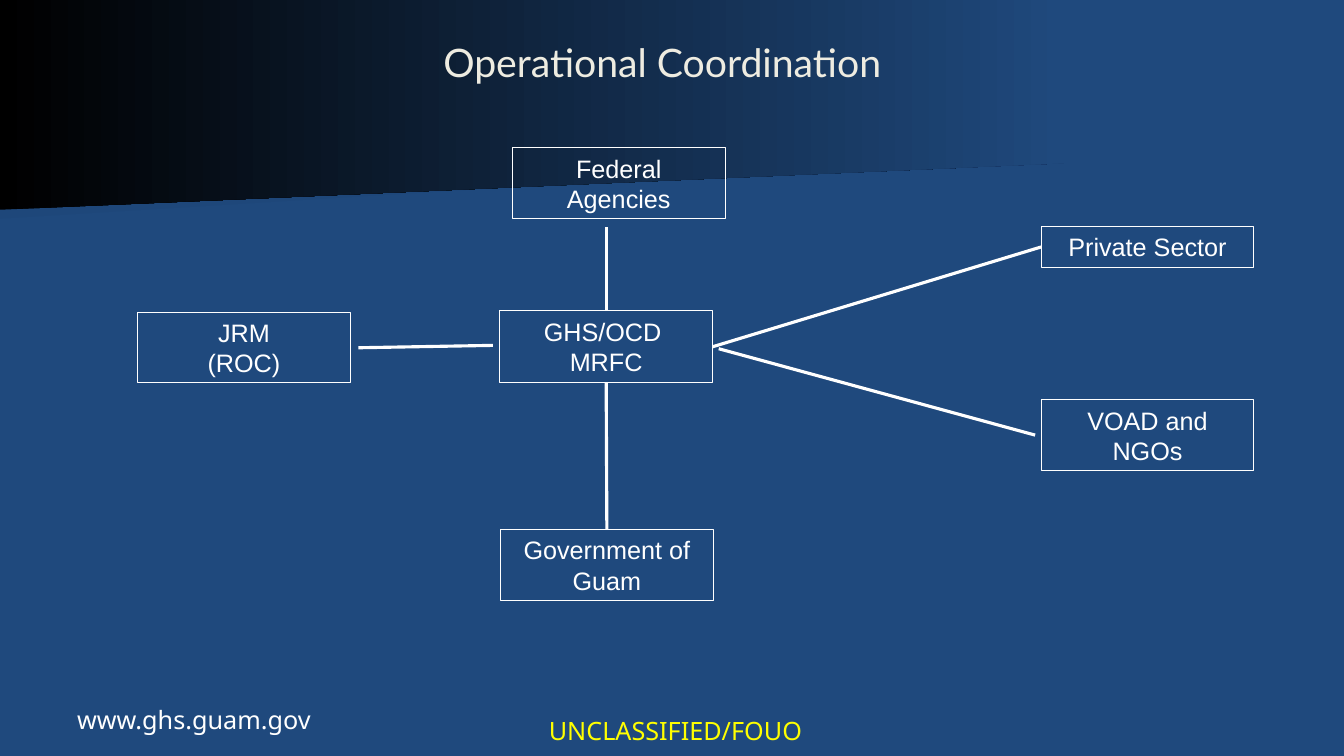
from lxml import etree
from pptx import Presentation
from pptx.dml.color import RGBColor
from pptx.enum import shapes, text
from pptx.oxml.ns import qn
from pptx.util import Pt

NAVY = RGBColor(0x1F, 0x49, 0x7D)
DEEP_BLUE = RGBColor(0x1E, 0x47, 0x7A)
BLACK = RGBColor(0, 0, 0)
WHITE = RGBColor(0xFF, 0xFF, 0xFF)
CREAM = RGBColor(0xEE, 0xEC, 0xE1)
YELLOW = RGBColor(0xFF, 0xFF, 0)
BOX_WIDTH = 152


def write(shape, content, font="Arial", size=18, color=WHITE,
          align=text.PP_ALIGN.CENTER, anchor=text.MSO_ANCHOR.MIDDLE):
    """Fill a shape with text, one paragraph per line."""
    frame = shape.text_frame
    frame.word_wrap = True
    frame.vertical_anchor = anchor
    frame.text = content
    for paragraph in frame.paragraphs:
        paragraph.alignment = align
        paragraph.font.name = font
        paragraph.font.size = Pt(size)
        paragraph.font.color.rgb = color


presentation = Presentation()
presentation.slide_width, presentation.slide_height = Pt(960), Pt(540)
slide = presentation.slides.add_slide(presentation.slide_layouts[6])
slide.background.fill.solid()
slide.background.fill.fore_color.rgb = NAVY

# Slanted gradient bands behind the title
bands = [
    (DEEP_BLUE, [(746.6, 110.2), (0, 156.2), (0, 72.7), (748, 72.7), (746.6, 92.2)]),
    (BLACK, [(760.3, 116.6), (0, 149.8), (0, 0), (760.3, 0)]),
]
for start_color, corners in bands:
    points = [(Pt(x), Pt(y)) for x, y in corners]
    builder = slide.shapes.build_freeform(*points[0])
    builder.add_line_segments(points[1:], close=True)
    band = builder.convert_to_shape()
    band.shadow.inherit = False
    band.line.fill.background()
    band.fill.gradient()
    band.fill.gradient_angle = 0
    for stop, color in zip(band.fill.gradient_stops, (start_color, NAVY)):
        stop.color.rgb = color

# Title and footers
labels = [
    (41, 21.6, 864, 44.6, "Operational Coordination",
     dict(font="Lato", size=28, color=CREAM)),
    (48, 504, 304, 24, "www.ghs.guam.gov",
     dict(font="Noto Sans", align=text.PP_ALIGN.LEFT, anchor=text.MSO_ANCHOR.BOTTOM)),
    (330.5, 512, 304, 24, "UNCLASSIFIED/FOUO",
     dict(font="Noto Sans", color=YELLOW, anchor=text.MSO_ANCHOR.BOTTOM)),
]
for left, top, width, height, content, style in labels:
    label = slide.shapes.add_textbox(Pt(left), Pt(top), Pt(width), Pt(height))
    write(label, content, **style)

# Links between the coordinating bodies
links = [
    (433.5, 378, 433, 273),
    (743.7, 176.4, 509, 247.7),
    (739.4, 310.8, 513.4, 249.1),
    (352.1, 246.7, 256, 248.4),
    (433.2, 222, 433.2, 162),
]
for ends in links:
    link = slide.shapes.add_connector(
        shapes.MSO_CONNECTOR.STRAIGHT, *(Pt(value) for value in ends))
    link.line.color.rgb = WHITE
    link.line.width = Pt(2.25)
    etree.SubElement(link._element.spPr, qn("a:effectLst"))

# Coordinating bodies
bodies = [
    (743.7, 161.8, 29, "Private Sector"),
    (743.7, 285.3, 51, "VOAD and NGOs"),
    (357, 222, 51, "GHS/OCD \nMRFC"),
    (98.3, 223, 50.5, "JRM\n(ROC)"),
    (366, 105.3, 51, "Federal Agencies"),
    (357.5, 378, 51, "Government of Guam"),
]
for left, top, height, name in bodies:
    box = slide.shapes.add_shape(
        shapes.MSO_SHAPE.RECTANGLE, Pt(left), Pt(top), Pt(BOX_WIDTH), Pt(height))
    box.shadow.inherit = False
    box.fill.background()
    box.line.color.rgb = WHITE
    box.line.width = Pt(0.75)
    write(box, name)

presentation.save("out.pptx")
